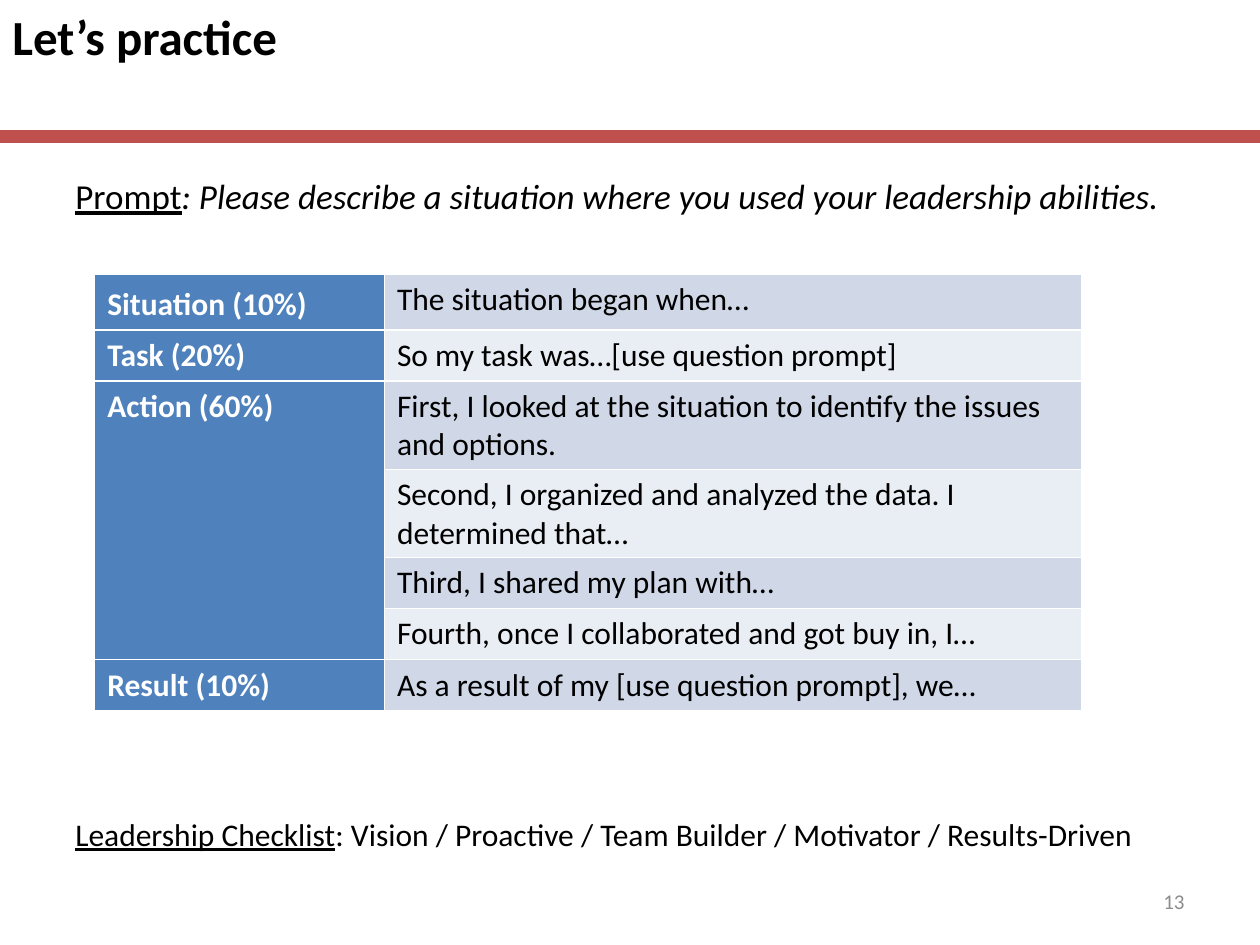
import pptx
import pptx.dml.color
import pptx.enum.shapes
import pptx.enum.text
import pptx.oxml
import pptx.oxml.ns
import pptx.util
from pptx.util import Cm

ALIGN = pptx.enum.text.PP_ALIGN
ANCHOR = pptx.enum.text.MSO_ANCHOR
BLACK, WHITE, RED, GREY = "000000", "FFFFFF", "C0504D", "8C8C8C"
HEAD_FILL, BANDS = "4F81BD", ("D0D8E8", "E9EDF4")
ROW_HEIGHT = 1.03

# Each step of the answer with its weight and its sentences
STEPS = [
    ("Situation (10%)", ["The situation began when…"]),
    ("Task (20%)", ["So my task was…[use question prompt]"]),
    ("Action (60%)", [
        "First, I looked at the situation to identify the issues and options.",
        "Second, I organized and analyzed the data. I determined that…",
        "Third, I shared my plan with…",
        "Fourth, once I collaborated and got buy in, I…",
    ]),
    ("Result (10%)", ["As a result of my [use question prompt], we…"]),
]


def color(value):
    return pptx.dml.color.RGBColor.from_string(value)


def add_text(p, text, size=18, fill=BLACK, bold=False, italic=False, underline=False):
    r = p.add_run()
    r.text = text
    font = r.font
    font.name, font.size = "Calibri", pptx.util.Pt(size)
    font.bold, font.italic, font.underline = bold, italic, underline
    font.color.rgb = color(fill)


def add_box(slide, left, top, width, height, align=ALIGN.LEFT, anchor=ANCHOR.TOP):
    """Add a wrapping text box and return its first paragraph."""
    sp = slide.shapes.add_textbox(Cm(left), Cm(top), Cm(width), Cm(height))
    tf = sp.text_frame
    tf.word_wrap = True
    tf.vertical_anchor = anchor
    p = tf.paragraphs[0]
    p.alignment = align
    return p


def add_header(slide, left, top, width, height):
    add_text(add_box(slide, left, top, 21.31, 2.54), "Let’s practice", size=28, bold=True)
    y = Cm(top + height)
    rule = slide.shapes.add_connector(
        pptx.enum.shapes.MSO_CONNECTOR.STRAIGHT, Cm(left), y, Cm(left + width), y)
    rule.line.color.rgb = color(RED)
    rule.line.width = pptx.util.Pt(7.5)
    rule._element.spPr.append(pptx.oxml.parse_xml(
        "<a:effectLst %s/>" % pptx.oxml.ns.nsdecls("a")))


def add_labelled_line(slide, label, text, left, top, width, height, size=18, italic=False):
    p = add_box(slide, left, top, width, height)
    add_text(p, label, size=size, underline=True)
    add_text(p, ": " + text, size=size, italic=italic)


def style_cell(cell, fill):
    tc_pr = cell._tc.get_or_add_tcPr()
    for side in ("lnL", "lnR", "lnT", "lnB"):
        tc_pr.append(pptx.oxml.parse_xml(
            '<a:%s w="12700" %s><a:solidFill><a:srgbClr val="%s"/></a:solidFill></a:%s>'
            % (side, pptx.oxml.ns.nsdecls("a"), WHITE, side)))
    cell.fill.solid()
    cell.fill.fore_color.rgb = color(fill)


def add_steps_table(slide, left, top, width, label_width):
    count = sum(len(sentences) for _, sentences in STEPS)
    table = slide.shapes.add_table(
        count, 2, Cm(left), Cm(top), Cm(width), Cm(count * ROW_HEIGHT)).table
    table.columns[0].width = Cm(label_width)
    table.columns[1].width = Cm(width - label_width)
    row = 0
    for label, sentences in STEPS:
        first = table.cell(row, 0)
        p = first.text_frame.paragraphs[0]
        add_text(p, label, fill=WHITE, bold=True)
        if row == 0:
            p.line_spacing = 1.15
            p.space_after = pptx.util.Pt(2)
        if len(sentences) > 1:
            first.merge(table.cell(row + len(sentences) - 1, 0))
        for sentence in sentences:
            table.rows[row].height = Cm(ROW_HEIGHT)
            style_cell(table.cell(row, 0), HEAD_FILL)
            cell = table.cell(row, 1)
            style_cell(cell, BANDS[row % 2])
            add_text(cell.text_frame.paragraphs[0], sentence)
            row += 1


def add_page_number(slide, number, left, top, width, height):
    p = add_box(slide, left, top, width, height, align=ALIGN.RIGHT, anchor=ANCHOR.MIDDLE)
    add_text(p, number, size=12, fill=GREY)


def main():
    prs = pptx.Presentation()
    prs.slide_width, prs.slide_height = Cm(25.4), Cm(19.05)
    slide = prs.slides.add_slide(prs.slide_layouts[6])
    add_header(slide, 0, 0, 25.4, 2.75)
    add_labelled_line(
        slide, "Prompt",
        "Please describe a situation where you used your leadership abilities.",
        1.27, 3.39, 22.86, 1.27, size=20, italic=True)
    add_steps_table(slide, 1.91, 5.52, 19.89, 5.84)
    add_labelled_line(
        slide, "Leadership Checklist",
        "Vision / Proactive / Team Builder / Motivator / Results-Driven",
        1.27, 16.3, 23.06, 1.03)
    add_page_number(slide, "13", 18.2, 17.66, 5.93, 1.01)
    prs.save("out.pptx")


if __name__ == "__main__":
    main()
